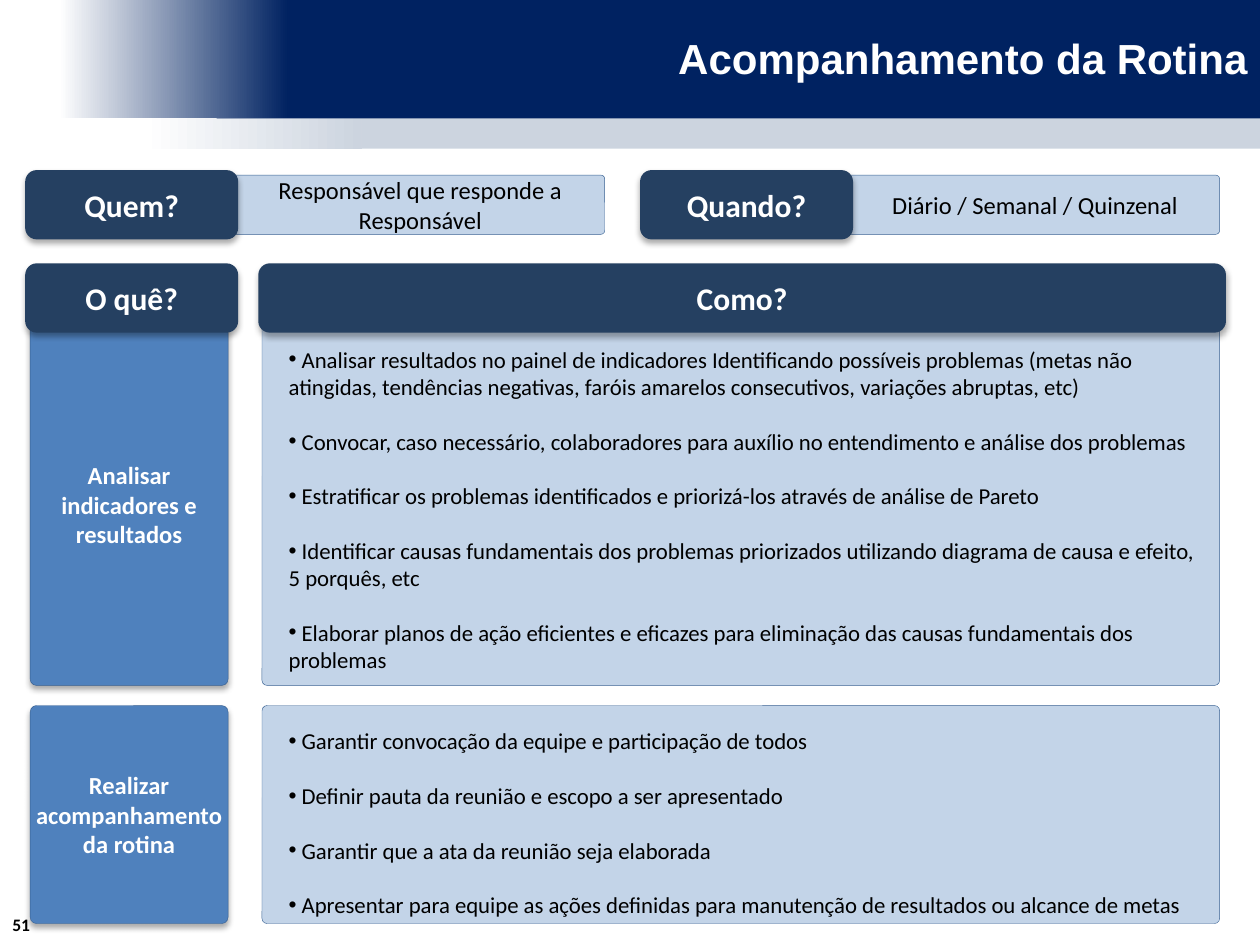
from collections import namedtuple
from dataclasses import dataclass

from lxml.etree import SubElement
from pptx import Presentation
from pptx.dml.color import RGBColor
from pptx.enum.shapes import MSO_SHAPE as Preset
from pptx.enum.text import MSO_ANCHOR as Anchor, PP_ALIGN as Align
from pptx.oxml.ns import qn
from pptx.util import Pt

PX = 9144  # EMU per px, 100 px to the inch
Box = namedtuple("Box", "left top width height")
Insets = namedtuple("Insets", "left top right bottom", defaults=(10, 5, 10, 5))


@dataclass(frozen=True)
class Theme:
    white: str = "FFFFFF"
    black: str = "000000"
    navy: str = "002261"
    mist: str = "CCD4DF"
    tag: str = "254061"
    topic: str = "4F81BD"
    panel: str = "B9CDE5"
    outline: str = "376092"
    title_font: str = "Arial"
    body_font: str = "Calibri"
    title_size: int = 24
    tag_size: int = 18
    label_size: int = 14
    item_size: int = 13
    number_size: int = 10
    item_gap: float = 15.6


THEME = Theme()

STEPS = [
    (257, 287, "Analisar indicadores e resultados", [
        "Analisar resultados no painel de indicadores Identificando possíveis problemas "
        "(metas não atingidas, tendências negativas, faróis amarelos consecutivos, "
        "variações abruptas, etc)",
        "Convocar, caso necessário, colaboradores para auxílio no entendimento e "
        "análise dos problemas",
        "Estratificar os problemas identificados e priorizá-los através de análise de Pareto",
        "Identificar causas fundamentais dos problemas priorizados utilizando diagrama "
        "de causa e efeito, 5 porquês, etc",
        "Elaborar planos de ação eficientes e eficazes para eliminação das causas "
        "fundamentais dos problemas",
    ]),
    (560, 173, "Realizar acompanhamento da rotina", [
        "Garantir convocação da equipe e participação de todos",
        "Definir pauta da reunião e escopo a ser apresentado",
        "Garantir que a ata da reunião seja elaborada",
        "Apresentar para equipe as ações definidas para manutenção de resultados "
        "ou alcance de metas",
    ]),
]


def rgb(color):
    return RGBColor.from_string(color)


def emu(box):
    return [length * PX for length in box]


def add_block(page, box, fill, preset=Preset.RECTANGLE, radius=None, outline=None):
    """Add a filled shape without shadow; radius is the corner in px."""
    block = page.shapes.add_shape(preset, *emu(box))
    block.shadow.inherit = False
    if radius is not None:
        block.adjustments[0] = radius / min(box.width, box.height)
    block.fill.solid()
    block.fill.fore_color.rgb = rgb(fill)
    if outline:
        block.line.color.rgb = rgb(outline)
        block.line.width = Pt(0.25)
    else:
        block.line.fill.background()
    return block


def add_shadow(block):
    effects = block._element.spPr.find(qn("a:effectLst"))
    shadow = SubElement(effects, qn("a:outerShdw"), blurRad=str(Pt(3.5)),
                        dist=str(Pt(2.2)), dir="5400000", rotWithShape="0")
    color = SubElement(shadow, qn("a:srgbClr"), val=THEME.black)
    SubElement(color, qn("a:alpha"), val="32000")


def write(shape, text, size, color, bold=False, align=Align.CENTER,
          anchor=Anchor.MIDDLE, insets=Insets(), font=THEME.body_font):
    frame = shape.text_frame
    frame.word_wrap = True
    frame.vertical_anchor = anchor
    frame.margin_left, frame.margin_top, frame.margin_right, frame.margin_bottom = emu(insets)
    frame.text = text
    for para in frame.paragraphs:
        para.alignment = align
        for span in para.runs:
            span.font.name = font
            span.font.size = Pt(size)
            span.font.bold = bold
            span.font.color.rgb = rgb(color)
    return frame


def add_band(page, box, color, fade_left, fade_width):
    """Add a solid strip whose left end fades in from white."""
    add_block(page, box, color)
    fade = add_block(page, Box(fade_left, box.top, fade_width, box.height), color)
    fade.fill.gradient()
    fade.fill.gradient_angle = 0
    for stop, shade in zip(fade.fill.gradient_stops, (THEME.white, color)):
        stop.color.rgb = rgb(shade)


def add_header(page, title):
    add_band(page, Box(201, 88, 799, 30), THEME.mist, 114, 173)
    add_band(page, Box(172, 0, 828, 94), THEME.navy, 47, 182)
    text_box = page.shapes.add_textbox(*emu(Box(106, 0, 894, 91)))
    write(text_box, title, THEME.title_size, THEME.white, bold=True,
          align=Align.RIGHT, font=THEME.title_font)


def add_tag(page, box, text):
    tag = add_block(page, box, THEME.tag, Preset.ROUNDED_RECTANGLE)
    add_shadow(tag)
    write(tag, text, THEME.tag_size, THEME.white, bold=True)


def add_panel(page, box, radius):
    panel = add_block(page, box, THEME.panel, Preset.ROUNDED_RECTANGLE, radius, THEME.outline)
    color = panel._element.spPr.find(qn("a:solidFill")).find(qn("a:srgbClr"))
    SubElement(color, qn("a:alpha"), val="85000")
    return panel


def add_answer(page, box, question, answer):
    """Add a question tag that overlaps the panel holding its answer."""
    panel = add_panel(page, Box(box.left + 157, box.top + 4, 303, 47), 3)
    write(panel, answer, THEME.label_size, THEME.black, insets=Insets(left=20))
    add_tag(page, Box(box.left, box.top, 169, box.height), question)


def add_step(page, box, topic, items):
    """Add a topic on the left and its bulleted actions on the right."""
    label = add_block(page, Box(box.left, box.top, 157, box.height), THEME.topic,
                      Preset.ROUNDED_RECTANGLE, 5, THEME.outline)
    add_shadow(label)
    write(label, topic, THEME.label_size, THEME.white, bold=True, insets=Insets(0, 0, 0, 0))

    panel = add_panel(page, Box(box.left + 184, box.top, box.width - 184, box.height), 4)
    frame = write(panel, "\n".join(f" {item}" for item in items), THEME.item_size,
                  THEME.black, align=Align.LEFT, anchor=Anchor.TOP,
                  insets=Insets(left=20, top=16))
    for index, para in enumerate(frame.paragraphs):
        if index:
            para.space_before = Pt(THEME.item_gap)
        properties = para._p.get_or_add_pPr()
        SubElement(properties, qn("a:buFont"), typeface=THEME.title_font)
        SubElement(properties, qn("a:buChar"), char="•")


def add_page_number(page, box, number):
    text_box = page.shapes.add_textbox(*emu(box))
    write(text_box, number, THEME.number_size, THEME.black, bold=True, align=Align.LEFT)


def main():
    deck = Presentation()
    deck.slide_width, deck.slide_height = 1000 * PX, 750 * PX
    page = deck.slides.add_slide(deck.slide_layouts[6])

    add_header(page, "Acompanhamento da Rotina")
    add_answer(page, Box(20, 135, 460, 55), "Quem?", "Responsável que responde a Responsável")
    add_answer(page, Box(508, 135, 460, 55), "Quando?", "Diário / Semanal / Quinzenal")
    for top, height, topic, items in STEPS:
        add_step(page, Box(24, top, 944, height), topic, items)
    add_tag(page, Box(20, 209, 169, 55), "O quê?")
    add_tag(page, Box(205, 209, 768, 55), "Como?")
    add_page_number(page, Box(0, 717, 43, 33), "51")

    deck.save("out.pptx")


if __name__ == "__main__":
    main()
